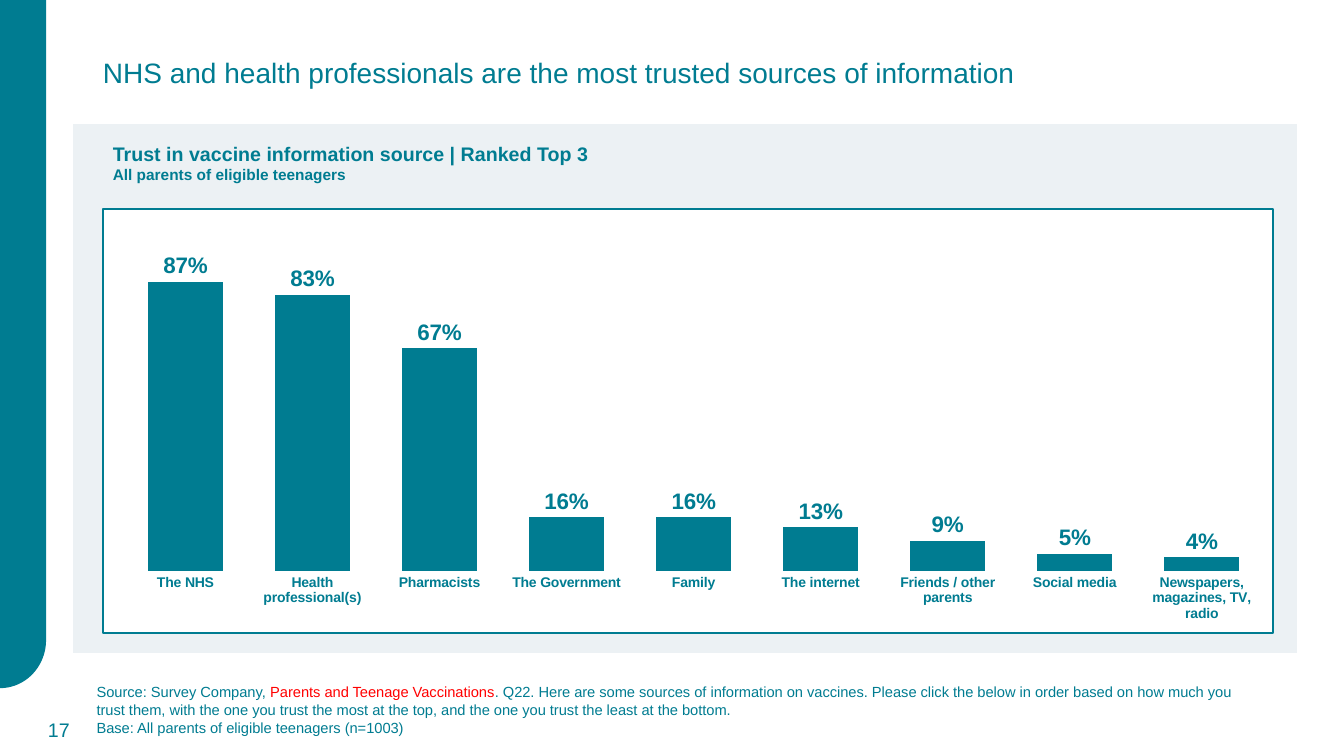
import math

from lxml import etree
from pptx import Presentation
from pptx.chart.data import CategoryChartData
from pptx.dml.color import RGBColor
from pptx.enum.chart import XL_CHART_TYPE, XL_LABEL_POSITION, XL_TICK_MARK
from pptx.enum.shapes import MSO_SHAPE
from pptx.enum.text import MSO_ANCHOR, MSO_AUTO_SIZE, PP_ALIGN
from pptx.oxml.ns import qn
from pptx.util import Pt

COLUMNS = XL_CHART_TYPE.COLUMN_CLUSTERED
OUTSIDE_END = XL_LABEL_POSITION.OUTSIDE_END
NO_TICKS = XL_TICK_MARK.NONE
RECTANGLE = MSO_SHAPE.RECTANGLE
TOP, MIDDLE = MSO_ANCHOR.TOP, MSO_ANCHOR.MIDDLE
LEFT, RIGHT = PP_ALIGN.LEFT, PP_ALIGN.RIGHT

EMU_PER_PX = 9144  # 100 px to the inch
FONT = "Arial"
COLORS = {"teal": "007C91", "red": "FF0000", "panel": "ECF1F4", "white": "FFFFFF"}

TRUST = {
    "The NHS": 0.87,
    "Health professional(s)": 0.83,
    "Pharmacists": 0.67,
    "The Government": 0.16,
    "Family": 0.16,
    "The internet": 0.13,
    "Friends / other parents": 0.09,
    "Social media": 0.05,
    "Newspapers, magazines, TV, radio": 0.04,
}
PLOT_AREA = {"x": 0.006, "y": 0.033, "w": 0.987, "h": 0.79}


def px(*lengths):
    return [length * EMU_PER_PX for length in lengths]


def rgb(name):
    return RGBColor.from_string(COLORS[name])


def style_font(font, size, color="teal", bold=False):
    font.name = FONT
    font.size = Pt(size)
    font.bold = bold
    font.color.rgb = rgb(color)


def paint(shape, fill, line, line_width):
    shape.shadow.inherit = False
    shape.fill.solid()
    shape.fill.fore_color.rgb = rgb(fill)
    shape.line.color.rgb = rgb(line)
    shape.line.width = Pt(line_width)


def fill_text(frame, paragraphs, anchor=MIDDLE, align=LEFT, wrap=True):
    """Write paragraphs, each a list of (text, size, color, bold) runs."""
    frame.word_wrap = wrap
    frame.auto_size = MSO_AUTO_SIZE.NONE
    frame.vertical_anchor = anchor
    for index, runs in enumerate(paragraphs):
        paragraph = frame.add_paragraph() if index else frame.paragraphs[0]
        paragraph.alignment = align
        for text, size, color, bold in runs:
            run = paragraph.add_run()
            run.text = text
            style_font(run.font, size, color, bold)


def add_text(slide, box, paragraphs, **options):
    fill_text(slide.shapes.add_textbox(*px(*box)).text_frame, paragraphs, **options)


def set_title(slide, box, text):
    title = slide.shapes.title
    title.left, title.top, title.width, title.height = px(*box)
    fill_text(title.text_frame, [[(text, 20, "teal", False)]])
    title.text_frame.paragraphs[0].line_spacing = 0.9


def add_panel(slide, box, fill, line):
    paint(slide.shapes.add_shape(RECTANGLE, *px(*box)), fill, line, 1.5)


def add_side_band(slide, width, straight, radius):
    """Draw the left band, whose lower right corner is a quarter ellipse."""
    steps = 24
    angles = [math.pi / 2 * step / steps for step in range(steps + 1)]
    curve = [px(width * math.cos(a), straight + radius * math.sin(a)) for a in angles]
    builder = slide.shapes.build_freeform(0, 0)
    builder.add_line_segments([px(width, 0)] + curve, close=True)
    paint(builder.convert_to_shape(), "teal", "teal", 1)


def place_plot_area(chart):
    plot_area = chart._chartSpace.chart.plotArea
    for old_layout in plot_area.findall(qn("c:layout")):
        plot_area.remove(old_layout)
    layout = etree.Element(qn("c:layout"))
    manual = etree.SubElement(layout, qn("c:manualLayout"))
    settings = {"layoutTarget": "inner", "xMode": "edge", "yMode": "edge", **PLOT_AREA}
    for name, value in settings.items():
        etree.SubElement(manual, qn("c:" + name)).set("val", str(value))
    plot_area.insert(0, layout)


def add_trust_chart(slide, box):
    data = CategoryChartData(number_format="0%")
    data.categories = list(TRUST)
    data.add_series("Series 1", list(TRUST.values()))
    chart = slide.shapes.add_chart(COLUMNS, *px(*box), data).chart
    chart.has_title = False
    chart.has_legend = False
    style_font(chart.font, 10)
    place_plot_area(chart)

    plot = chart.plots[0]
    plot.gap_width = 70
    plot.vary_by_categories = False
    bars = plot.series[0].format.fill
    bars.solid()
    bars.fore_color.rgb = rgb("teal")

    plot.has_data_labels = True
    labels = plot.data_labels
    labels.show_value = True
    labels.position = OUTSIDE_END
    labels.number_format = "0%"
    labels.number_format_is_linked = False
    style_font(labels.font, 16, bold=True)

    value_axis = chart.value_axis
    value_axis.minimum_scale, value_axis.maximum_scale = 0, 1
    value_axis.has_major_gridlines = False
    value_axis.visible = False
    category_axis = chart.category_axis
    category_axis.major_tick_mark = NO_TICKS
    category_axis.format.line.fill.background()
    style_font(category_axis.tick_labels.font, 10, bold=True)


def main():
    presentation = Presentation()
    presentation.slide_width, presentation.slide_height = px(1333, 750)
    slide = presentation.slides.add_slide(presentation.slide_layouts[5])

    add_side_band(slide, 45, 635, 47)
    set_title(slide, (92, 1, 1150, 145),
              "NHS and health professionals are the most trusted sources of information")
    add_text(slide, (86, 684, 1160, 40), [
        [("Source: Survey Company, ", 10.5, "teal", False),
         ("Parents and Teenage Vaccinations", 10.5, "red", False),
         (". Q22. Here are some sources of information on vaccines. Please click the "
          "below in order based on how much you trust them, with the one you trust the "
          "most at the top, and the one you trust the least at the bottom.",
          10.5, "teal", False)],
        [("Base: All parents of eligible teenagers (n=1003)", 10.5, "teal", False)],
    ])
    add_text(slide, (14, 704, 65, 40), [[("17", 14, "teal", False)]], align=RIGHT)
    add_panel(slide, (71, 122, 1217, 527), "panel", "white")
    add_text(slide, (102, 136, 499, 52), [
        [("Trust in vaccine information source | Ranked Top 3", 14, "teal", True)],
        [("All parents of eligible teenagers", 11, "teal", True)],
    ], anchor=TOP, wrap=False)
    add_panel(slide, (102, 207, 1161, 421), "white", "teal")
    add_trust_chart(slide, (114, 223, 1149, 417))

    presentation.save("out.pptx")


if __name__ == "__main__":
    main()
